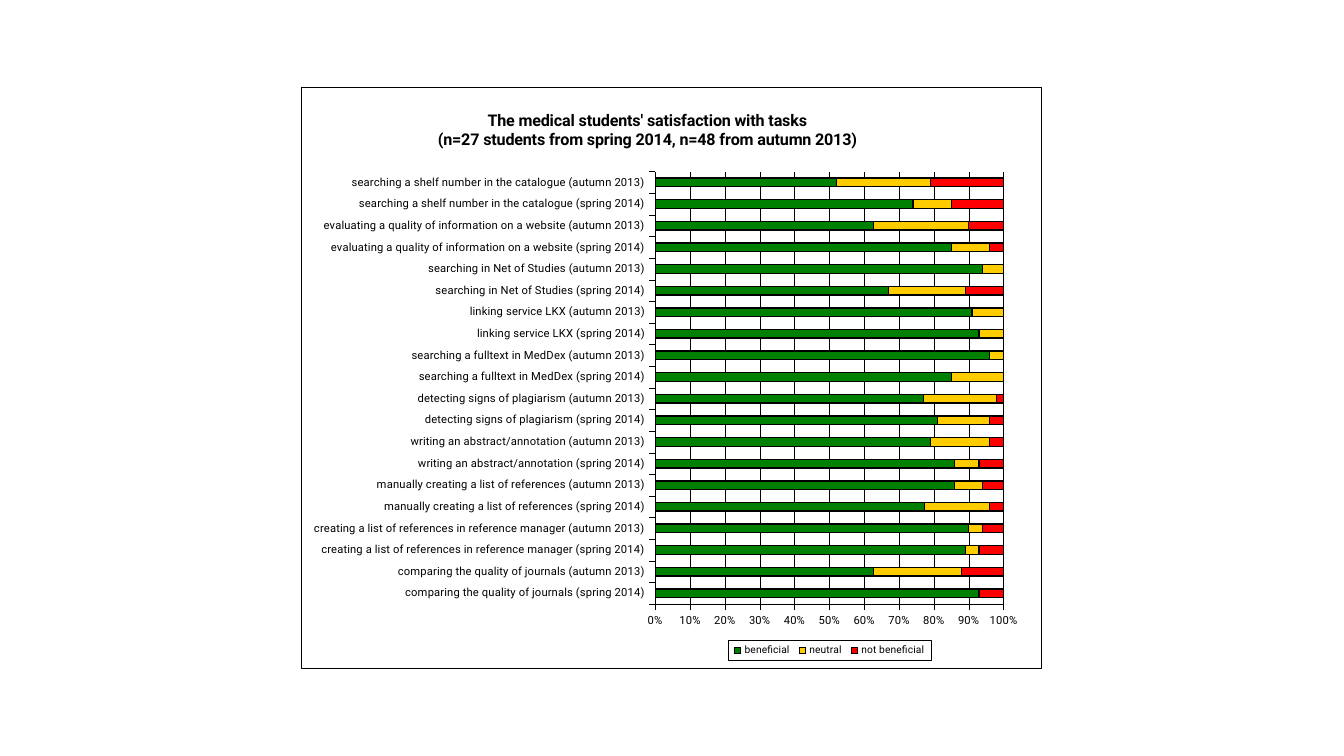
from dataclasses import dataclass

from lxml import etree
from pptx import Presentation
from pptx.chart.data import CategoryChartData
from pptx.dml.color import RGBColor
from pptx.enum.chart import XL_CHART_TYPE, XL_LEGEND_POSITION, XL_TICK_MARK
from pptx.oxml import parse_xml
from pptx.oxml.ns import nsdecls, qn
from pptx.util import Inches, Pt

STACKED_BAR = XL_CHART_TYPE.BAR_STACKED_100
LEGEND_BOTTOM = XL_LEGEND_POSITION.BOTTOM
TICK_OUTSIDE, TICK_NONE = XL_TICK_MARK.OUTSIDE, XL_TICK_MARK.NONE
BLANK_LAYOUT = 6
BLACK, WHITE = "000000", "FFFFFF"
HAIRLINE = 0.25


@dataclass(frozen=True)
class Rating:
    name: str
    color: str
    shares: tuple[int, ...]


@dataclass(frozen=True)
class Placement:
    """Position as fractions of the chart area."""
    x: float
    y: float
    w: float = 0
    h: float = 0


TITLE = ("The medical students' satisfaction with tasks\n"
         "(n=27 students from spring 2014, n=48 from autumn 2013)")
TERMS = ("spring 2014", "autumn 2013")
# Tasks from the bottom of the chart upwards
TASKS = (
    "comparing the quality of journals",
    "creating a list of references in reference manager",
    "manually creating a list of references",
    "writing an abstract/annotation",
    "detecting signs of plagiarism",
    "searching a fulltext in MedDex",
    "linking service LKX",
    "searching in Net of Studies",
    "evaluating a quality of information on a website",
    "searching a shelf number in the catalogue",
)
RATINGS = (
    Rating("beneficial", "008000", (93, 62, 89, 90, 78, 85, 85, 79, 81, 77,
                                    85, 96, 93, 91, 67, 94, 85, 62, 74, 52)),
    Rating("neutral", "FFCC00", (0, 25, 4, 4, 19, 8, 7, 17, 15, 21,
                                 15, 4, 7, 9, 22, 6, 11, 27, 11, 27)),
    Rating("not beneficial", "FF0000", (7, 12, 7, 6, 4, 6, 7, 4, 4, 2,
                                        0, 0, 0, 0, 11, 0, 4, 10, 15, 21)),
)

TITLE_PLACE = Placement(0.18, 0.034)
PLOT_PLACE = Placement(0.478, 0.146, 0.471, 0.744)
LEGEND_PLACE = Placement(0.576, 0.952, 0.275, 0.035)

VALUE_AXIS_FORMAT = {
    "minimum_scale": 0,
    "maximum_scale": 1,
    "major_unit": 0.1,
    "has_major_gridlines": True,
}


def rgb(color: str) -> RGBColor:
    return RGBColor.from_string(color)


def style_font(font, size: float, name: str = "Roboto", bold: bool = False) -> None:
    font.color.rgb = rgb(BLACK)
    for key, value in {"name": name, "size": Pt(size), "bold": bold}.items():
        setattr(font, key, value)


def style_line(line, width: float) -> None:
    line.color.rgb = rgb(BLACK)
    line.width = Pt(width)


def style_axis(axis) -> None:
    style_font(axis.tick_labels.font, 8)
    style_line(axis.format.line, HAIRLINE)
    axis.major_tick_mark = TICK_OUTSIDE
    axis.minor_tick_mark = TICK_NONE


def place(part: etree._Element, where: Placement, after: str | None = None,
          inner: bool = False) -> None:
    """Give a chart part a manual layout, following the named child."""
    for old in part.findall(qn("c:layout")):
        part.remove(old)
    target = '<c:layoutTarget val="inner"/>' if inner else ""
    fields = [("xMode", "edge"), ("yMode", "edge"), ("x", where.x), ("y", where.y)]
    if where.w:
        fields += [("w", where.w), ("h", where.h)]
    body = "".join(f'<c:{tag} val="{value}"/>' for tag, value in fields)
    layout = parse_xml(f'<c:layout {nsdecls("c")}><c:manualLayout>{target}{body}'
                       '</c:manualLayout></c:layout>')
    if after:
        part.find(qn(after)).addnext(layout)
    else:
        part.insert(0, layout)


def frame(part: etree._Element) -> None:
    """White fill and thin black border, ahead of the part's text format."""
    part.find(qn("c:txPr")).addprevious(parse_xml(
        f'<c:spPr {nsdecls("c", "a")}>'
        f'<a:solidFill><a:srgbClr val="{WHITE}"/></a:solidFill>'
        f'<a:ln w="{Pt(HAIRLINE)}"><a:solidFill><a:srgbClr val="{BLACK}"/>'
        '</a:solidFill></a:ln></c:spPr>'))


def add_satisfaction_chart(slide) -> None:
    data = CategoryChartData()
    data.categories = [f"{task} ({term})" for task in TASKS for term in TERMS]
    for rating in RATINGS:
        data.add_series(rating.name, rating.shares)
    chart = slide.shapes.add_chart(STACKED_BAR, Inches(2.99), Inches(0.86),
                                   Inches(7.34), Inches(5.77), data).chart
    style_font(chart.font, 8.5, "Arial")
    frame(chart.element)

    # Title
    chart.has_title = True
    title = chart.chart_title
    title.text_frame.text = TITLE
    for paragraph in title.text_frame.paragraphs:
        for run in paragraph.runs:
            style_font(run.font, 11.5, bold=True)
    place(title.element, TITLE_PLACE, after="c:tx")

    # Bars
    plot = chart.plots[0]
    plot.gap_width, plot.overlap = 150, 100
    plot.vary_by_categories = False
    for series, rating in zip(plot.series, RATINGS):
        series.format.fill.solid()
        series.format.fill.fore_color.rgb = rgb(rating.color)
        style_line(series.format.line, 1)
    place(chart.element.chart.plotArea, PLOT_PLACE, inner=True)

    # Axes
    for axis in (chart.category_axis, chart.value_axis):
        style_axis(axis)
    shares = chart.value_axis
    for key, value in VALUE_AXIS_FORMAT.items():
        setattr(shares, key, value)
    shares.tick_labels.number_format = "0%"
    shares.tick_labels.number_format_is_linked = False
    style_line(shares.major_gridlines.format.line, HAIRLINE)

    # Legend
    chart.has_legend = True
    legend = chart.legend
    legend.position = LEGEND_BOTTOM
    legend.include_in_layout = False
    style_font(legend.font, 7.3)
    legend_part = chart.element.chart.find(qn("c:legend"))
    place(legend_part, LEGEND_PLACE, after="c:legendPos")
    frame(legend_part)


def main() -> None:
    deck = Presentation()
    deck.slide_width, deck.slide_height = Inches(13.33), Inches(7.5)
    slide = deck.slides.add_slide(deck.slide_layouts[BLANK_LAYOUT])
    add_satisfaction_chart(slide)
    deck.save("out.pptx")


if __name__ == "__main__":
    main()
